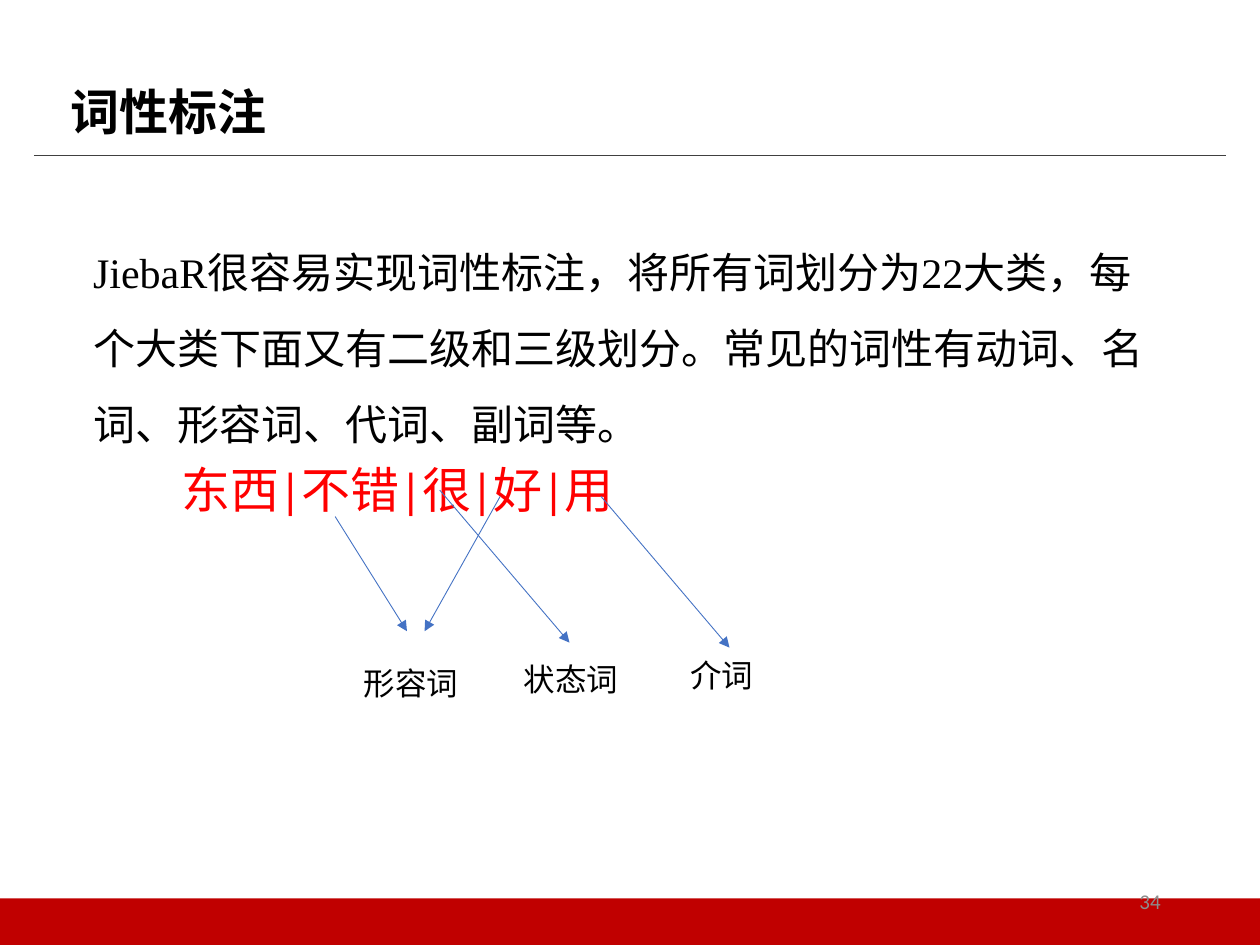
from lxml.etree import SubElement
from pptx import Presentation
from pptx.dml.color import RGBColor
from pptx.enum.shapes import MSO_CONNECTOR, MSO_SHAPE
from pptx.enum.text import MSO_ANCHOR, PP_ALIGN
from pptx.oxml.ns import qn
from pptx.util import Inches, Pt

COLORS = {"band": "C00000", "rule": "404040", "text": "000000",
          "example": "FF0000", "arrow": "4472C4", "number": "8C8C8C"}
CJK = "Noto Sans CJK SC"

# Content
TITLE = "词性标注"
BODY = ("JiebaR很容易实现词性标注，将所有词划分为22大类，每个大类下面又有二级和三级划分。"
        "常见的词性有动词、名词、形容词、代词、副词等。")
WORDS = ["东西", "不错", "很", "好", "用"]
NUMBER = "34"
TAGS = [("形容词", 2.79, 5.22), ("状态词", 4.06, 5.19), ("介词", 5.38, 5.16)]
ARROWS = [((2.66, 4.1), (3.23, 5.01)), ((3.97, 3.94), (3.37, 5.01)),
          ((3.49, 3.89), (4.52, 5.1)), ((4.77, 3.94), (5.79, 5.14))]

prs = Presentation()
prs.slide_width, prs.slide_height = Inches(10), Inches(7.5)
slide = prs.slides.add_slide(prs.slide_layouts[6])


def rgb(name):
    return RGBColor.from_string(COLORS[name])


def add_frame(x, y, w, h, anchor=MSO_ANCHOR.TOP):
    tf = slide.shapes.add_textbox(*map(Inches, (x, y, w, h))).text_frame
    tf.word_wrap = True
    tf.vertical_anchor = anchor
    return tf


def write(tf, text, size=18, font="Calibri", color="text", bold=False,
          align=PP_ALIGN.LEFT, spacing=1.0, before=0, indent=0):
    p = tf.paragraphs[0] if not tf.text else tf.add_paragraph()
    p.alignment, p.line_spacing, p.space_before = align, spacing, Pt(before)
    if indent:
        p._p.get_or_add_pPr().set("marL", str(Inches(indent)))
    r = p.add_run()
    r.text = text
    r.font.size, r.font.name, r.font.bold = Pt(size), font, bold
    r.font.color.rgb = rgb(color)
    SubElement(r._r.get_or_add_rPr(), qn("a:ea"), typeface=CJK)


def add_line(start, end, color, arrow=False):
    line = slide.shapes.add_connector(
        MSO_CONNECTOR.STRAIGHT, *map(Inches, (*start, *end)))
    line.line.color.rgb = rgb(color)
    line.line.width = Pt(0.5)
    if arrow:
        SubElement(line.line._get_or_add_ln(), qn("a:tailEnd"), type="triangle")
    SubElement(line._element.spPr, qn("a:effectLst"))


# Footer band and title rule
band = slide.shapes.add_shape(
    MSO_SHAPE.RECTANGLE, *map(Inches, (-0.03, 7.13, 10.04, 0.4)))
band.shadow.inherit = False
band.fill.solid()
band.fill.fore_color.rgb = rgb("band")
band.line.fill.background()
add_line((0.27, 1.23), (9.73, 1.23), "rule")

# Title, body with the segmented example, slide number
write(add_frame(0.46, 0.6, 8.62, 0.62, MSO_ANCHOR.MIDDLE), TITLE,
      size=28, font=CJK, bold=True, spacing=0.9)
body = add_frame(0.64, 1.71, 8.62, 4.76)
write(body, BODY, size=24, font="Times New Roman", spacing=1.5, before=10)
write(body, "|".join(WORDS), size=28, color="example", spacing=0.9,
      before=10, indent=0.7)
write(add_frame(7.06, 6.95, 2.25, 0.4, MSO_ANCHOR.MIDDLE), NUMBER,
      size=12, color="number", align=PP_ALIGN.RIGHT)

# Arrows from words to their part-of-speech tags
for start, end in ARROWS:
    add_line(start, end, "arrow", arrow=True)
for tag, x, y in TAGS:
    write(add_frame(x, y, 1.41, 0.4), tag)

prs.save("out.pptx")
